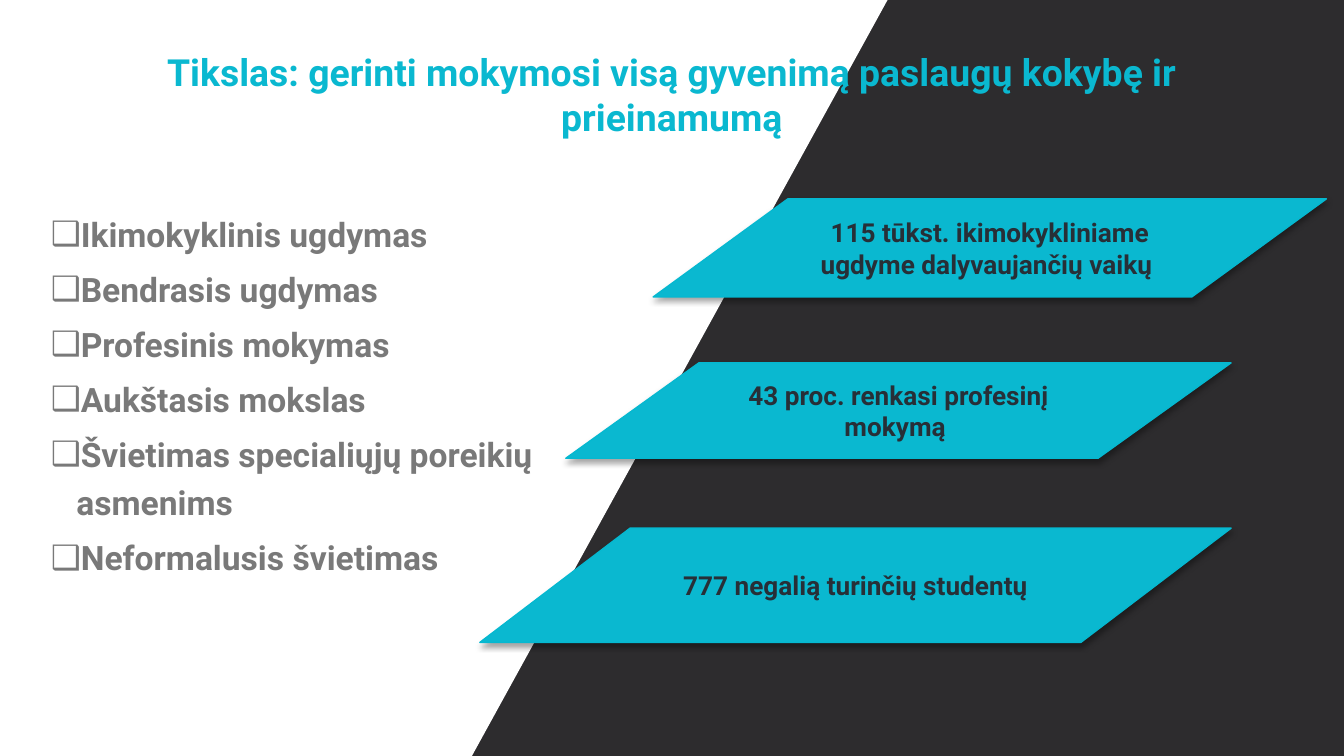
from lxml.etree import SubElement
from pptx import Presentation
from pptx.dml.color import RGBColor
from pptx.enum.shapes import MSO_SHAPE as Shape
from pptx.enum.text import MSO_ANCHOR as Anchor, PP_ALIGN as Align
from pptx.oxml.ns import qn
from pptx.util import Inches, Pt

FONT = "Roboto"
DARK = RGBColor(0x2D, 0x2C, 0x2E)
WHITE = RGBColor(0xFF, 0xFF, 0xFF)
CYAN = RGBColor(0x0A, 0xB8, 0xD0)
CYAN_EDGE = RGBColor(0x05, 0xB8, 0xD0)
INK = RGBColor(0x27, 0x2F, 0x37)
GREY = RGBColor(0x79, 0x79, 0x79)

TITLE = "Tikslas: gerinti mokymosi visą gyvenimą paslaugų kokybę ir prieinamumą"
TOPICS = [
    "Ikimokyklinis ugdymas",
    "Bendrasis ugdymas",
    "Profesinis mokymas",
    "Aukštasis mokslas",
    "Švietimas specialiųjų poreikių asmenims",
    "Neformalusis švietimas",
]
# Left, top, width, height and text of each fact
FACTS = [
    (4.21, 2.7, 4.95, 0.71, "43 proc. renkasi profesinį mokymą "),
    (4.86, 1.48, 5.01, 0.73, "115 tūkst. ikimokykliniame ugdyme dalyvaujančių vaikų "),
    (3.57, 3.93, 5.59, 0.85, "777 negalią turinčių studentų"),
]


def add_span(para, text, size, color):
    span = para.add_run()
    span.text = text
    span.font.name = FONT
    span.font.size = Pt(size)
    span.font.bold = True
    span.font.color.rgb = color


def add_filled(page, kind, left, top, width, height, color):
    shape = page.shapes.add_shape(kind, Inches(left), Inches(top),
                                  Inches(width), Inches(height))
    shape.shadow.inherit = False
    shape.fill.solid()
    shape.fill.fore_color.rgb = color
    return shape


def add_white_side(page):
    """Tilted white triangle that covers the left side, behind the title."""
    side = add_filled(page, Shape.RIGHT_TRIANGLE, -0.97, -1.15, 10.59, 10.59, WHITE)
    side.line.fill.background()
    side.rotation = 343.8
    side.element.spPr.find(qn("a:xfrm")).set("flipV", "1")
    page.shapes.title.element.addprevious(side.element)


def set_title(page):
    title = page.shapes.title
    title.left, title.top = Inches(0.5), Inches(0.23)
    title.width, title.height = Inches(9), Inches(0.94)
    frame = title.text_frame
    frame.word_wrap = True
    frame.vertical_anchor = Anchor.MIDDLE
    frame.margin_left = frame.margin_right = Inches(0.07)
    frame.margin_top = frame.margin_bottom = Inches(0.04)
    para = frame.paragraphs[0]
    para.alignment = Align.CENTER
    add_span(para, TITLE, 20, CYAN)


def add_soft_shadow(shape):
    effects = shape.element.spPr.find(qn("a:effectLst"))
    shadow = SubElement(effects, qn("a:outerShdw"), blurRad=str(Pt(3.1)),
                        dist=str(Pt(1.8)), dir="5400000", rotWithShape="0")
    color = SubElement(shadow, qn("a:srgbClr"), val="000000")
    SubElement(color, qn("a:alpha"), val="35000")


def add_fact(page, left, top, width, height, text):
    box = add_filled(page, Shape.FLOWCHART_DATA, left, top, width, height, CYAN)
    box.line.color.rgb = CYAN_EDGE
    box.line.width = Pt(0.75)
    add_soft_shadow(box)
    frame = box.text_frame
    frame.word_wrap = True
    frame.vertical_anchor = Anchor.MIDDLE
    para = frame.paragraphs[0]
    para.alignment = Align.CENTER
    add_span(para, text, 14, INK)


def set_bullet(para, indent, mark):
    props = para._p.get_or_add_pPr()
    props.set("marL", str(indent))
    props.set("indent", str(-indent))
    SubElement(props, qn("a:buFont"), typeface="Arial")
    SubElement(props, qn("a:buChar"), char=mark)


def add_topics(page):
    box = page.shapes.add_textbox(Inches(0.28), Inches(1.48), Inches(4.72), Inches(3.17))
    frame = box.text_frame
    frame.word_wrap = True
    for index, topic in enumerate(TOPICS):
        para = frame.add_paragraph() if index else frame.paragraphs[0]
        para.line_spacing = 1.2
        para.space_before = Pt(3.6)
        set_bullet(para, Inches(0.19), "❑")
        add_span(para, topic, 18, GREY)


def main():
    deck = Presentation()
    deck.slide_width, deck.slide_height = Pt(720), Pt(405)
    page = deck.slides.add_slide(deck.slide_layouts[5])

    # Two-tone background
    page.background.fill.solid()
    page.background.fill.fore_color.rgb = DARK
    add_white_side(page)

    # Title, facts on the right, topics on the left
    set_title(page)
    for fact in FACTS:
        add_fact(page, *fact)
    add_topics(page)
    deck.save("out.pptx")


if __name__ == "__main__":
    main()
